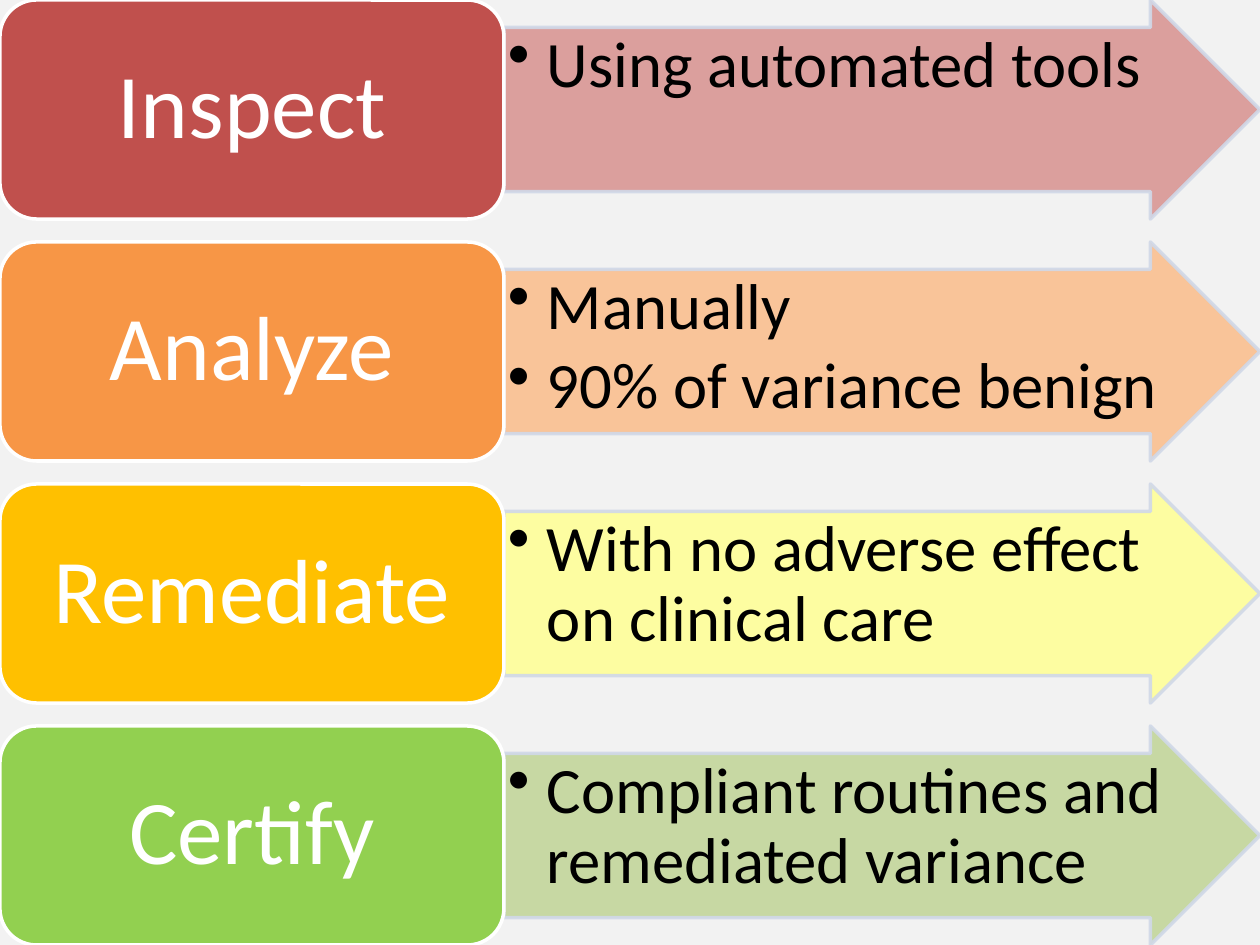
from lxml.etree import SubElement
from pptx import Presentation
from pptx.dml.color import RGBColor
from pptx.enum.shapes import MSO_SHAPE as Shape
from pptx.enum.text import MSO_ANCHOR as Anchor, PP_ALIGN as Align
from pptx.oxml.ns import qn
from pptx.util import Pt

PX = 7257  # EMU per px, 126 px to the inch
WIDTH, HEIGHT = 1260, 945
BOX, ROW, PITCH = 504, 219, 242

BACK = RGBColor(0xF2, 0xF2, 0xF2)
WHITE = RGBColor(0xFF, 0xFF, 0xFF)
BLACK = RGBColor(0x00, 0x00, 0x00)
EDGE = RGBColor(0xD0, 0xD8, 0xE8)
RED, PINK = RGBColor(0xC0, 0x50, 0x4D), RGBColor(0xD9, 0x96, 0x94)
ORANGE, PEACH = RGBColor(0xF7, 0x96, 0x46), RGBColor(0xFA, 0xC0, 0x90)
GOLD, LEMON = RGBColor(0xFF, 0xC0, 0x00), RGBColor(0xFF, 0xFF, 0x99)
GREEN, SAGE = RGBColor(0x92, 0xD0, 0x50), RGBColor(0xC3, 0xD6, 0x9B)

STEPS = [
    ("Inspect", RED, PINK, ["Using automated tools"]),
    ("Analyze", ORANGE, PEACH, ["Manually", "90% of variance benign"]),
    ("Remediate", GOLD, LEMON, ["With no adverse effect on clinical care"]),
    ("Certify", GREEN, SAGE, ["Compliant routines and remediated variance"]),
]


def add_block(kind, left, top, width, fill, edge, pad_x, pad_y):
    """Add a filled, outlined shape one row high and return it."""
    block = slide.shapes.add_shape(kind, left * PX, top * PX, width * PX, ROW * PX)
    block.shadow.inherit = False
    block.fill.solid()
    block.fill.fore_color.rgb = fill
    block.line.color.rgb = edge
    block.line.width = Pt(2)
    frame = block.text_frame
    frame.word_wrap = True
    frame.margin_left = frame.margin_right = pad_x * PX
    frame.margin_top = frame.margin_bottom = pad_y * PX
    return block


def style(para, size, color, align, after):
    para.alignment = align
    para.line_spacing = 0.9
    para.space_after = Pt(after)
    para.font.name = "Calibri"
    para.font.size = Pt(size)
    para.font.color.rgb = color


deck = Presentation()
deck.slide_width, deck.slide_height = WIDTH * PX, HEIGHT * PX
slide = deck.slides.add_slide(deck.slide_layouts[6])
slide.background.fill.solid()
slide.background.fill.fore_color.rgb = BACK

for row, (name, dark, light, notes) in enumerate(STEPS):
    top = row * PITCH

    arrow = add_block(Shape.RIGHT_ARROW, BOX, top, WIDTH - BOX, light, EDGE, 4, 4)
    arrow.adjustments[0], arrow.adjustments[1] = 0.75, 0.5
    for color in arrow._element.spPr.iter(qn("a:srgbClr")):
        SubElement(color, qn("a:alpha"), val="90000")
    frame = arrow.text_frame
    frame.vertical_anchor = Anchor.TOP
    for i, note in enumerate(notes):
        para = frame.add_paragraph() if i else frame.paragraphs[0]
        para.text = note
        props = para._p.get_or_add_pPr()
        props.set("marL", str(39 * PX))
        props.set("indent", str(-39 * PX))
        SubElement(props, qn("a:buChar"), char="•")
        style(para, 37, BLACK, Align.LEFT, 5.5)

    box = add_block(Shape.ROUNDED_RECTANGLE, 0, top, BOX, dark, WHITE, 28, 14)
    box.text_frame.vertical_anchor = Anchor.MIDDLE
    box.text_frame.text = name
    style(box.text_frame.paragraphs[0], 52, WHITE, Align.CENTER, 0)

deck.save("out.pptx")
